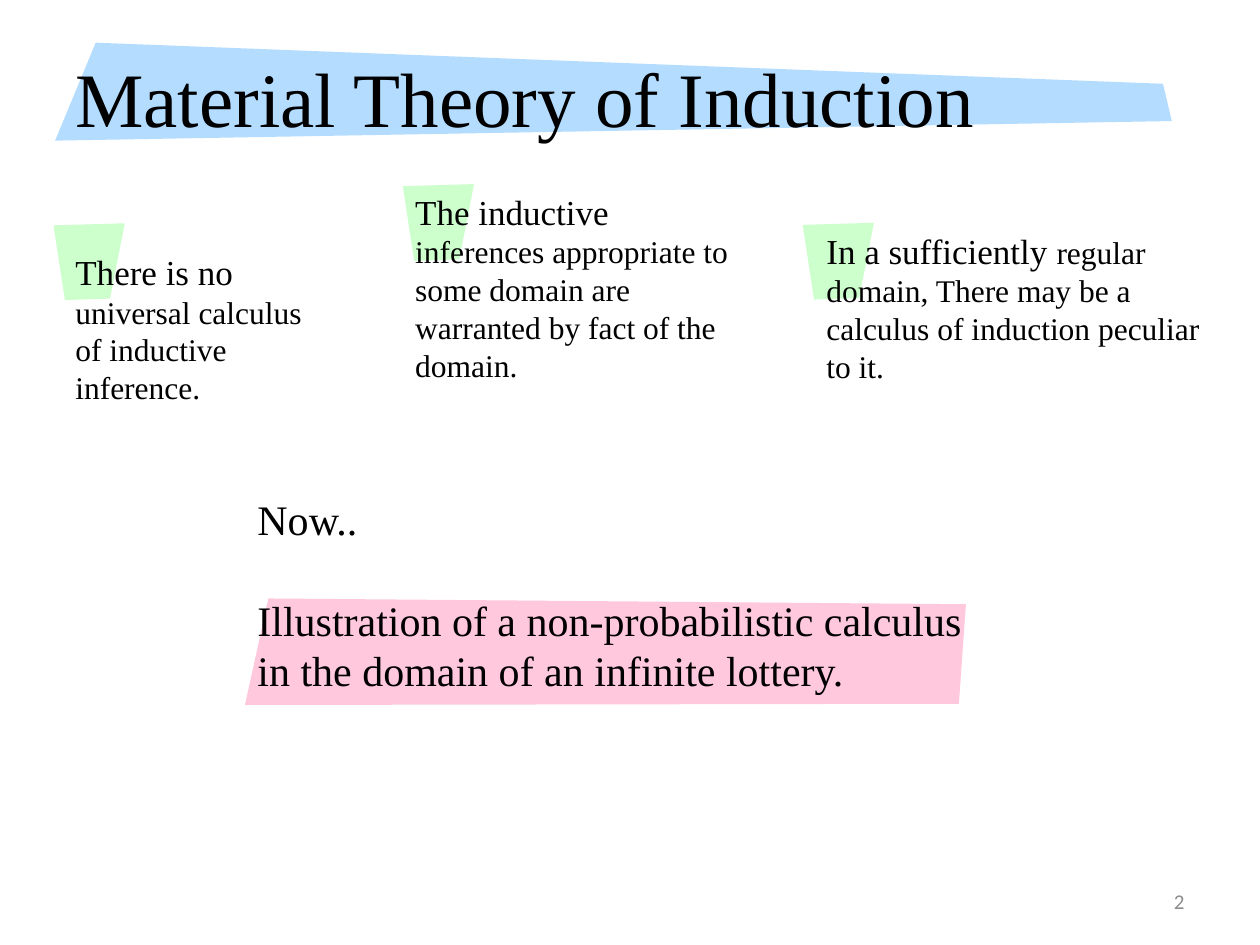
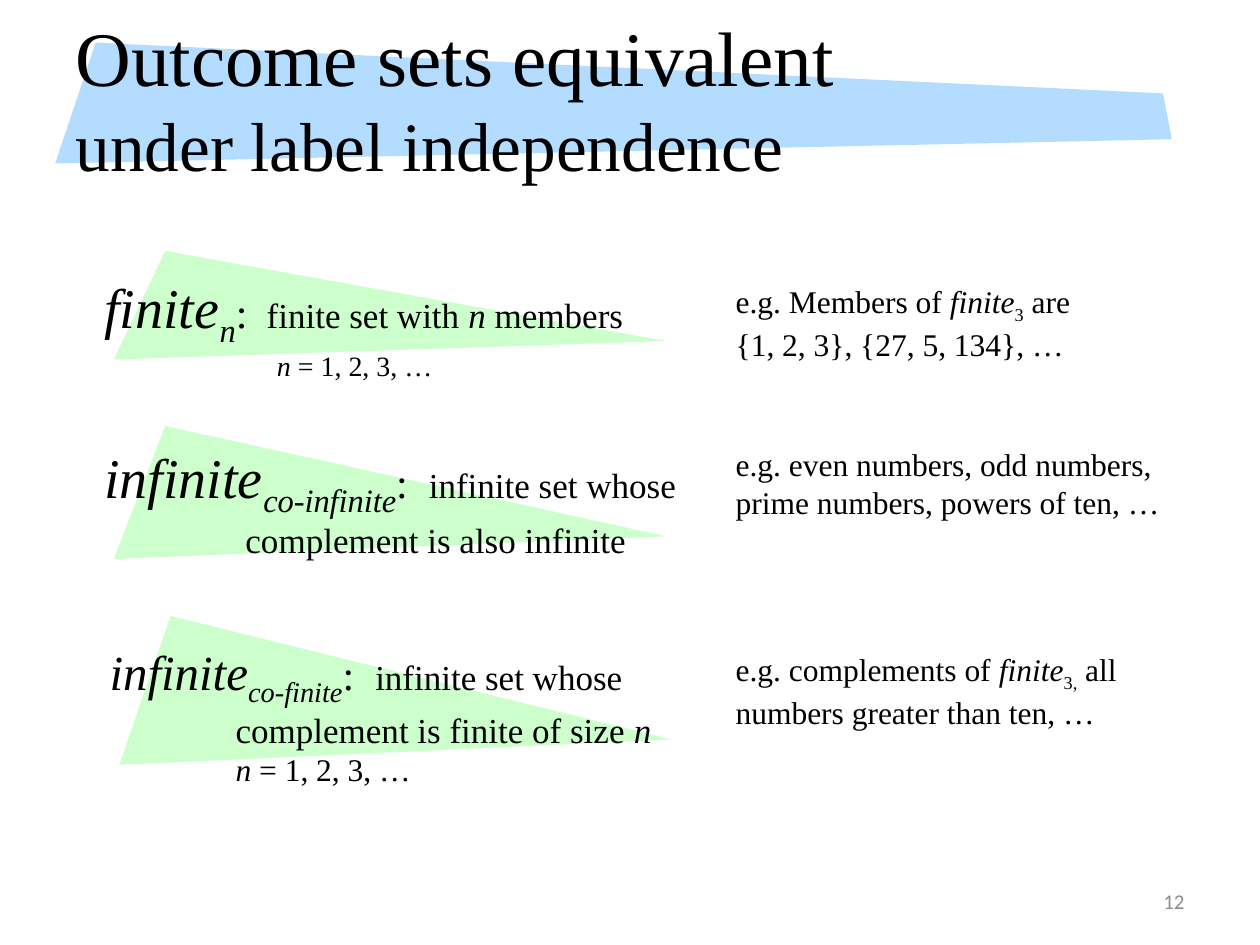
from pptx import Presentation
from pptx.dml.color import RGBColor
from pptx.enum.text import MSO_ANCHOR, PP_ALIGN
from pptx.util import Pt

COLOURS = {
    "text": "000000",
    "number": "8C8C8C",
    "band": "B4DCFF",
    "accent": "CCFFCC",
    "topic": "FFC8DC",
}
SERIF, SANS = "Times New Roman", "Calibri"
BREAK = ("\n", 18)


def add_outline(slide, points, colour):
    """Draw a filled polygon without a line."""
    corners = [(Pt(x), Pt(y)) for x, y in points]
    builder = slide.shapes.build_freeform(*corners[0])
    builder.add_line_segments(corners[1:], close=True)
    shape = builder.convert_to_shape()
    shape.shadow.inherit = False
    shape.fill.solid()
    shape.fill.fore_color.rgb = RGBColor.from_string(COLOURS[colour])
    shape.line.fill.background()


def add_run(paragraph, content, size, marks="", font=SERIF, colour="text"):
    """Add a run; the marks are i for italic and s for subscript."""
    run = paragraph.add_run()
    run.text = content
    run.font.size = Pt(size)
    run.font.name = font
    run.font.italic = "i" in marks
    run.font.color.rgb = RGBColor.from_string(COLOURS[colour])
    if "s" in marks:
        run.font._element.set("baseline", "-25000")


def add_text(slide, left, top, width, height, paragraphs, hanging=0):
    """Add a text box; each paragraph is a list of run tuples."""
    text_frame = slide.shapes.add_textbox(
        Pt(left), Pt(top), Pt(width), Pt(height)).text_frame
    text_frame.word_wrap = True
    for index, runs in enumerate(paragraphs):
        paragraph = text_frame.add_paragraph() if index else text_frame.paragraphs[0]
        for run in runs:
            if run == BREAK:
                paragraph.add_line_break()
            else:
                add_run(paragraph, *run)
        if hanging:
            properties = paragraph._p.get_or_add_pPr()
            properties.set("marL", str(Pt(hanging)))
            properties.set("indent", str(-Pt(hanging)))
    return text_frame


def add_title(slide, runs, band_height):
    top = 24.4
    add_outline(slide, [(54.7, top), (664.6, top + 0.42 * band_height),
                        (669.6, top + 0.8 * band_height),
                        (31.5, top + band_height)], "band")
    text_frame = add_text(slide, 36, 21.6, 602.6, 67.7, [runs])
    text_frame.vertical_anchor = MSO_ANCHOR.MIDDLE


def add_slide_number(slide, number):
    text_frame = add_text(slide, 516, 500.5, 168, 28.75,
                          [[(number, 12, "", SANS, "number")]])
    text_frame.vertical_anchor = MSO_ANCHOR.MIDDLE
    text_frame.paragraphs[0].alignment = PP_ALIGN.RIGHT


def add_tag(slide, left, top):
    """Small slanted patch behind the first words of a claim."""
    add_outline(slide, [(left, top + 1.2), (left + 40.7, top),
                        (left + 32.3, top + 43), (left + 6.5, top + 43.9)], "accent")


def add_wedge(slide, left, top, height):
    """Triangle that points right, behind a definition."""
    add_outline(slide, [(left + 29.3, top), (left, top + height),
                        (left + 315.5, top + 0.83 * height)], "accent")


def build_theory_slide(slide):
    # Three claims: tag position, text box, opening words, remaining words
    claims = [
        ((30.6, 127.6), (36, 139.7, 158.4, 97.2), "There is no ",
         "universal calculus of inductive inference."),
        ((230.2, 105.2), (230.2, 105.2, 201.6, 118.8), "The inductive ",
         "inferences appropriate to some domain are warranted by fact of the domain."),
        ((458.7, 127.3), (465.1, 127.3, 239, 97.2), "In a sufficiently ",
         "regular domain, There may be a calculus of induction peculiar to it."),
    ]
    for tag, _, _, _ in claims:
        add_tag(slide, *tag)
    add_title(slide, [("Material Theory of Induction", 44)], 56)
    add_slide_number(slide, "2")
    for _, box, opening, rest in claims:
        add_text(slide, *box, [[(opening, 20), (rest, 18)]])

    # Next topic
    add_outline(slide, [(153.4, 342), (552, 345.3), (548, 402.2), (140, 402.9)], "topic")
    text_frame = add_text(slide, 140, 278.6, 434, 124, [
        [("Now..", 24)],
        [("Illustration of a non-probabilistic calculus "
          "in the domain of an infinite lottery.", 24)],
    ])
    text_frame.paragraphs[1].space_before = Pt(28.8)


def build_outcome_slide(slide):
    # Each row: wedge, definition box with hanging indent, example box
    rows = [
        {
            "wedge": (65.1, 143.4, 62),
            "box": (52.6, 151.9, 316.8, 65.5), "hanging": 98.6,
            "definition": [
                ("finite", 32, "i"), ("n", 32, "is"), (": ", 24),
                (" finite set with ", 20), ("n", 20, "i"), (" members", 20), BREAK,
                ("n", 16, "i"), (" = 1, 2, 3, …", 16)],
            "example_box": (413.3, 157.7, 206, 51),
            "example": [
                [("e.g. Members of ", 18), ("finite", 18, "i"),
                 ("3", 18, "s"), (" are", 18)],
                [("{1, 2, 3}, {27, 5, 134}, …", 18)]],
        },
        {
            "wedge": (65.1, 243.4, 76),
            "box": (52.6, 249.1, 357.1, 104.4), "hanging": 80.6,
            "definition": [
                ("infinite", 32, "i"), ("co-infinite", 32, "is"), (":  ", 24),
                ("infinite set whose complement is also infinite", 20)],
            "example_box": (413.3, 250.6, 283, 51),
            "example": [[("e.g. even numbers, odd numbers, "
                          "prime numbers, powers of ten, …", 18)]],
        },
        {
            "wedge": (68.2, 352, 85),
            "box": (55.5, 362.9, 337.7, 108.7), "hanging": 72,
            "definition": [
                ("infinite", 28, "i"), ("co-finite", 28, "is"), (":  ", 24),
                ("infinite set whose complement is finite of size ", 20),
                ("n", 20, "i"), BREAK, ("n", 18, "i"), (" = 1, 2, 3, …", 18)],
            "example_box": (413.3, 367.9, 249, 51),
            "example": [[("e.g. complements of ", 18), ("finite", 18, "i"),
                         ("3,", 18, "s"), (" all numbers greater than ten, …", 18)]],
        },
    ]
    for row in rows:
        add_wedge(slide, *row["wedge"])
    add_title(slide, [("Outcome sets equivalent", 44.1), BREAK,
                      ("under label independence", 39.6)], 69)
    add_slide_number(slide, "12")
    for row in rows:
        add_text(slide, *row["box"], [row["definition"]], row["hanging"])
        add_text(slide, *row["example_box"], row["example"])


def main():
    presentation = Presentation()
    presentation.slide_width, presentation.slide_height = Pt(720), Pt(540)
    blank_layout = presentation.slide_layouts[6]
    for build in (build_theory_slide, build_outcome_slide):
        build(presentation.slides.add_slide(blank_layout))
    presentation.save("out.pptx")


if __name__ == "__main__":
    main()
